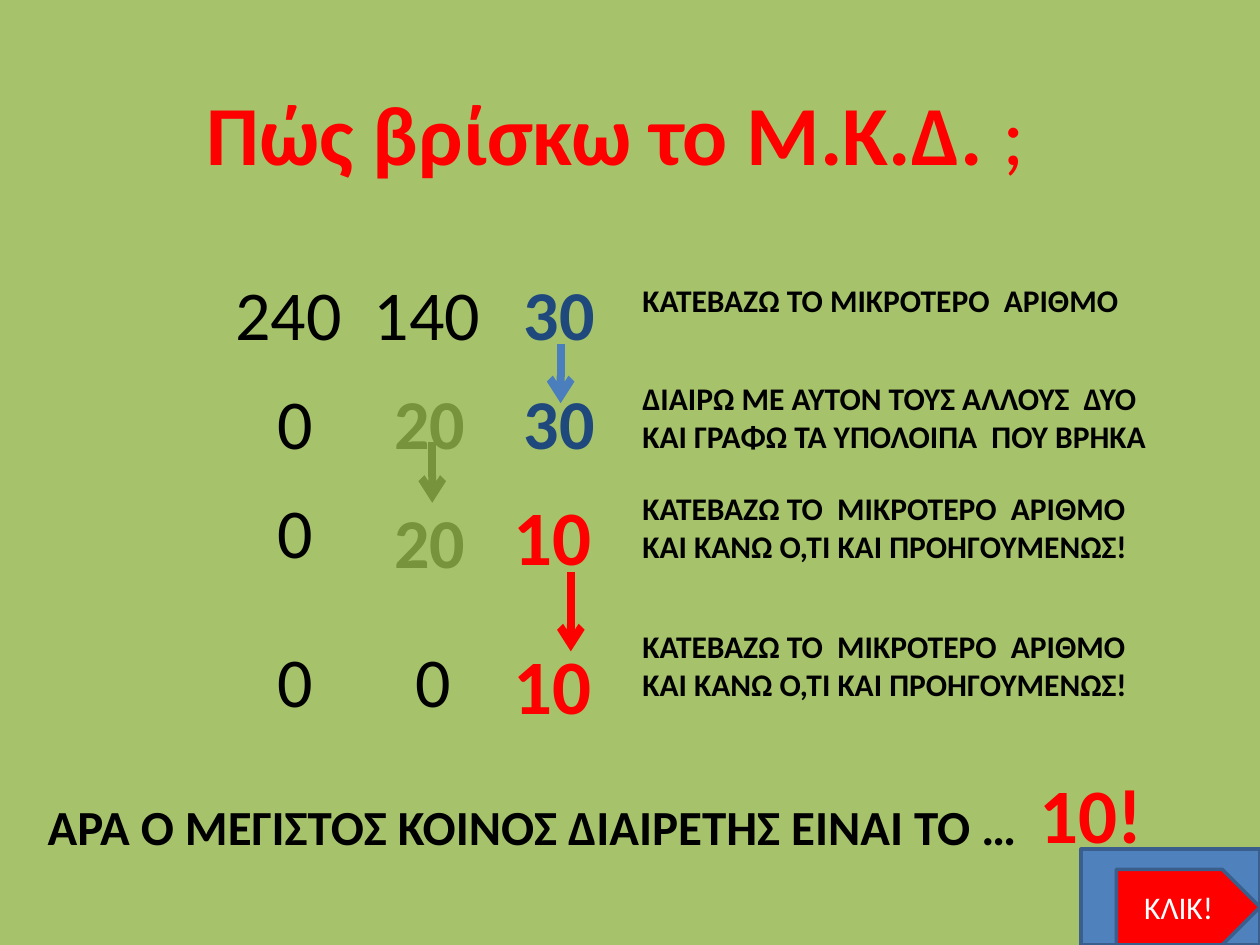
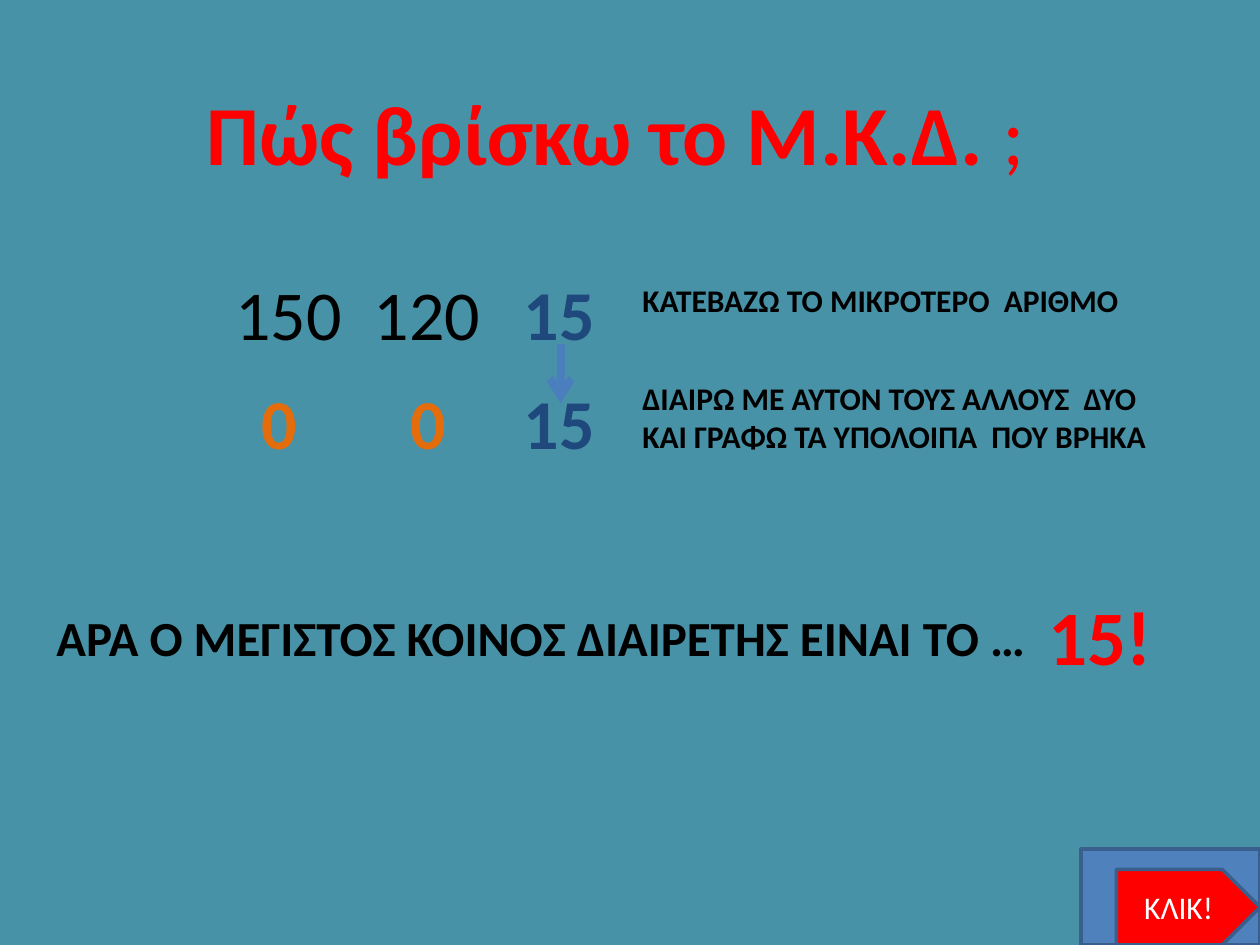
from pptx import Presentation
from pptx.dml.color import RGBColor
from pptx.enum.shapes import MSO_CONNECTOR, MSO_SHAPE
from pptx.enum.text import MSO_ANCHOR, MSO_AUTO_SIZE, PP_ALIGN
from pptx.oxml.ns import qn
from pptx.util import Pt
from lxml.etree import SubElement

GREEN, TEAL = "A6C26B", "4892A7"
BLACK, WHITE, RED = "000000", "FFFFFF", "FF0000"
NAVY, OLIVE, ORANGE = "1F497D", "77933C", "E46C0A"
ARROW_BLUE, BUTTON_BLUE, BUTTON_EDGE = "4B7EBC", "4F81BD", "3A5F8C"

ROWS = [151.2, 213.1, 275.8, 360.7]
NOTE_LEFT = 360
NUMBER_WIDTH = 56.9
NUMBER_HEIGHT = 55.4
REMAINDER_LEFT, MIDDLE_LEFT, DIVISOR_LEFT, RESULT_LEFT = 133.2, 218.2, 292.3, 286.6
INSET = 7.2

PLAIN = {"size": Pt(40), "bold": False}
STRONG = {"size": Pt(40), "bold": True}
RESULT = {"size": Pt(44), "bold": True}
NOTE = {"size": Pt(18), "bold": True}
CONCLUSION = {"size": Pt(28), "bold": True}
BUTTON = {"size": Pt(18), "bold": False}
TITLE = {"size": Pt(48), "bold": True}
TITLE_END = {"size": Pt(48), "bold": False}

LOWER_SMALLEST = "ΚΑΤΕΒΑΖΩ ΤΟ ΜΙΚΡΟΤΕΡΟ  ΑΡΙΘΜΟ"
DIVIDE_OTHERS = "ΔΙΑΙΡΩ ΜΕ ΑΥΤΟΝ ΤΟΥΣ ΑΛΛΟΥΣ  ΔΥΟ\vΚΑΙ ΓΡΑΦΩ ΤΑ ΥΠΟΛΟΙΠΑ  ΠΟΥ ΒΡΗΚΑ"
REPEAT_STEP = "ΚΑΤΕΒΑΖΩ ΤΟ  ΜΙΚΡΟΤΕΡΟ  ΑΡΙΘΜΟ\nΚΑΙ ΚΑΝΩ Ο,ΤΙ ΚΑΙ ΠΡΟΗΓΟΥΜΕΝΩΣ!"


def color(value):
    return RGBColor.from_string(value)


def set_values(target, values):
    for name, value in values.items():
        setattr(target, name, value)


def format_font(font, style, shade):
    set_values(font, {"name": "Calibri", **style})
    font.color.rgb = color(shade)


def add_text(page, text, left, top, width, height, style, shade=BLACK, shift=0):
    box = page.shapes.add_textbox(Pt(left), Pt(top), Pt(width), Pt(height))
    frame = box.text_frame
    set_values(frame, {"word_wrap": True, "margin_left": Pt(INSET + shift),
                       "auto_size": MSO_AUTO_SIZE.SHAPE_TO_FIT_TEXT})
    frame.text = text
    for para in frame.paragraphs:
        for span in para.runs:
            format_font(span.font, style, shade)


def add_number(page, text, left, top, style=PLAIN, shade=BLACK, shift=0):
    add_text(page, text, left, top, NUMBER_WIDTH, NUMBER_HEIGHT, style, shade, shift)


def add_result(page, text, left, top, width=73.4):
    add_text(page, text, left, top, width, 60.5, RESULT, RED)


def add_note(page, text, top, height=51):
    add_text(page, text, NOTE_LEFT, top, 329, height, NOTE)


def add_arrow(page, center, top, bottom, shade):
    arrow = page.shapes.add_connector(
        MSO_CONNECTOR.STRAIGHT, Pt(center), Pt(top), Pt(center), Pt(bottom))
    arrow.line.width = Pt(4.5)
    arrow.line.color.rgb = color(shade)
    SubElement(arrow.line._get_or_add_ln(), qn("a:tailEnd"), type="arrow")
    SubElement(arrow._element.spPr, qn("a:effectLst"))


def add_block(page, kind, left, top, width, height, fill):
    block = page.shapes.add_shape(kind, Pt(left), Pt(top), Pt(width), Pt(height))
    block.shadow.inherit = False
    block.fill.solid()
    block.fill.fore_color.rgb = color(fill)
    block.line.color.rgb = color(BUTTON_EDGE)
    block.line.width = Pt(2)
    return block


def add_button(page):
    add_block(page, MSO_SHAPE.RECTANGLE, 617.8, 485.3, 102.2, 54.7, BUTTON_BLUE)
    button = add_block(page, MSO_SHAPE.PENTAGON, 637.9, 496.8, 82.1, 43.2, RED)
    button.text_frame.vertical_anchor = MSO_ANCHOR.MIDDLE
    para = button.text_frame.paragraphs[0]
    para.alignment = PP_ALIGN.CENTER
    span = para.add_run()
    span.text = "ΚΛΙΚ!"
    format_font(span.font, BUTTON, WHITE)


def add_title(page):
    title = page.shapes.title
    set_values(title, {"left": Pt(110.9), "top": Pt(43.2),
                       "width": Pt(535.7), "height": Pt(73.4)})
    set_values(title.text_frame, {"vertical_anchor": MSO_ANCHOR.TOP, "word_wrap": True,
                                  "auto_size": MSO_AUTO_SIZE.NONE})
    para = title.text_frame.paragraphs[0]
    para.alignment = PP_ALIGN.LEFT
    for text, style in (("Πώς βρίσκω το Μ.Κ.Δ. ", TITLE), (";", TITLE_END)):
        span = para.add_run()
        span.text = text
        format_font(span.font, style, RED)


def add_page(deck, background, first, second, divisor):
    page = deck.slides.add_slide(deck.slide_layouts[5])
    page.background.fill.solid()
    page.background.fill.fore_color.rgb = color(background)
    add_title(page)
    add_text(page, first, 127.4, ROWS[0], 85, NUMBER_HEIGHT, PLAIN)
    add_text(page, second, 206.6, ROWS[0], 96.5, NUMBER_HEIGHT, PLAIN)
    for top in ROWS[:2]:
        add_number(page, divisor, DIVISOR_LEFT, top, STRONG, NAVY)
    add_arrow(page, 320.4, 196.6, 230.4, ARROW_BLUE)
    add_note(page, LOWER_SMALLEST, 157, 29)
    add_note(page, DIVIDE_OTHERS, ROWS[1])
    add_button(page)
    return page


def add_conclusion(page, answer, left, top, answer_top):
    add_text(page, "ΑΡΑ Ο ΜΕΓΙΣΤΟΣ ΚΟΙΝΟΣ ΔΙΑΙΡΕΤΗΣ ΕΙΝΑΙ ΤΟ …",
             left, top, 612, 41, CONCLUSION)
    add_result(page, answer, left + 567, answer_top, 90.7)


def build_long_example(deck):
    page = add_page(deck, GREEN, "240", "140", "30")
    for top in ROWS[1:]:
        add_number(page, "0", REMAINDER_LEFT, top, shift=18)
    add_number(page, "0", 212.4, ROWS[3], shift=18)
    for top in (ROWS[1], 281.5):
        add_number(page, "20", MIDDLE_LEFT, top, STRONG, OLIVE)
    for top in ROWS[2:]:
        add_result(page, "10", RESULT_LEFT, top)
    add_arrow(page, 247, 252.7, 287.3, OLIVE)
    add_arrow(page, 326.2, 326.9, 372.2, RED)
    for top in (ROWS[2], 355):
        add_note(page, REPEAT_STEP, top)
    add_conclusion(page, "10!", 20.2, 451.4, 434.2)


def build_short_example(deck):
    page = add_page(deck, TEAL, "150", "120", "15")
    for left in (REMAINDER_LEFT, MIDDLE_LEFT):
        add_number(page, "0", left, ROWS[1], STRONG, ORANGE, shift=9)
    add_conclusion(page, "15!", 25.2, 343.4, 332.6)


def main():
    deck = Presentation()
    deck.slide_width, deck.slide_height = Pt(720), Pt(540)
    build_long_example(deck)
    build_short_example(deck)
    deck.save("out.pptx")


if __name__ == "__main__":
    main()
